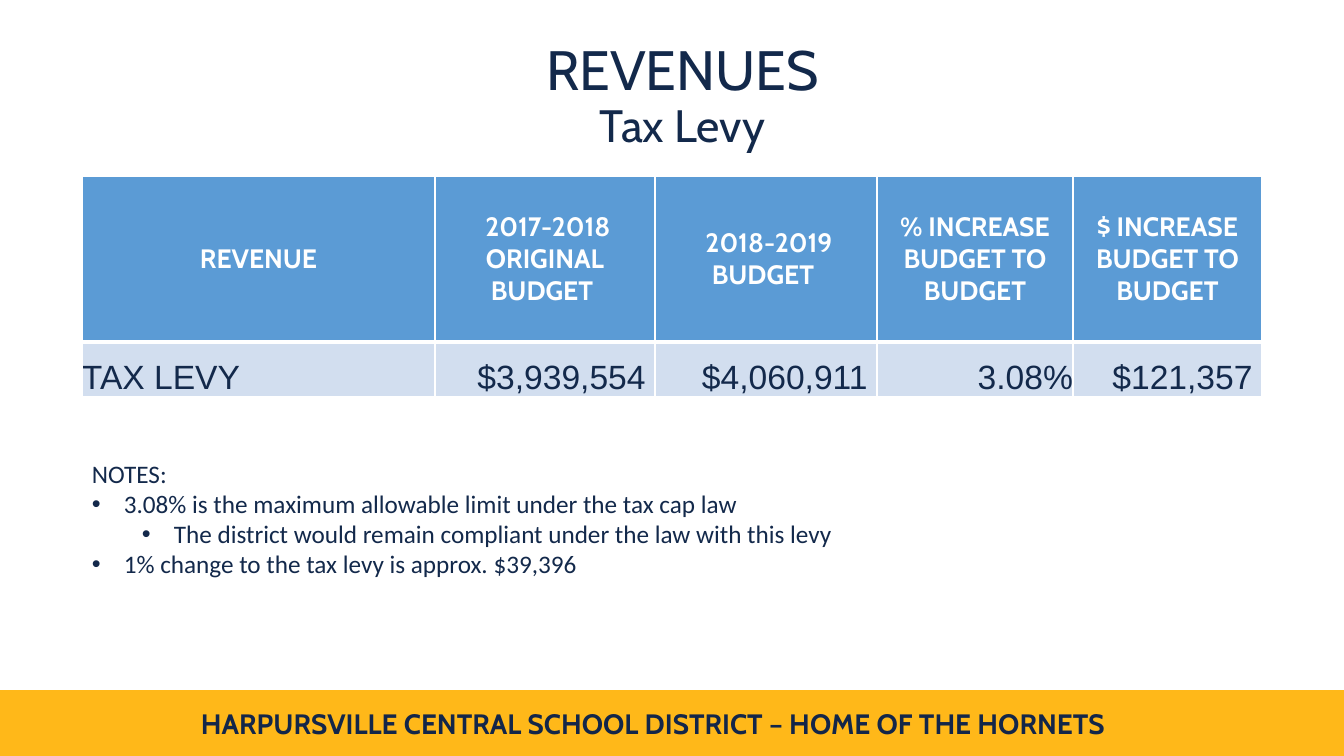
"""Build the tax levy revenue slide."""
from lxml.etree import SubElement
from pptx import Presentation
from pptx.dml.color import RGBColor
from pptx.enum.shapes import MSO_SHAPE
from pptx.enum.text import MSO_ANCHOR, MSO_AUTO_SIZE, PP_ALIGN
from pptx.oxml import parse_xml
from pptx.oxml.ns import nsdecls, qn
from pptx.util import Pt

WIDE, HIGH = 1344, 756
SCALE = 12192000 / WIDE
NAVY, WHITE, GOLD = "13294B", "FFFFFF", "FFB819"

TITLE = [("REVENUES", 39.6), ("Tax Levy", 32.4)]
FOOTER = "HARPURSVILLE CENTRAL SCHOOL DISTRICT – HOME OF THE HORNETS"
HEADS = ["REVENUE", " 2017-2018 ORIGINAL BUDGET ", " 2018-2019 BUDGET ",
         "% INCREASE BUDGET TO BUDGET", "$ INCREASE BUDGET TO BUDGET"]
LEVY = ["TAX LEVY", "$3,939,554 ", "$4,060,911 ", "3.08%", "$121,357 "]
NOTES = [
    (None, "NOTES:"),
    (0, "3.08% is the maximum allowable limit under the tax cap law"),
    (1, "The district would remain compliant under the law with this levy"),
    (0, "1% change to the tax levy is approx. $39,396"),
]
COLS, ROWS = [353, 220, 222, 196, 189], [166, 55]
BOXES = {
    "title": (103, 45, 1159, 105),
    "band": (0, 691, WIDE, 64),
    "footer": (177, 702, 952, 44),
    "table": (82, 176, sum(COLS), sum(ROWS)),
    "notes": (82, 453, 996, 132),
}
HANG, STEP = 32, 50
STYLES = [
    dict(fill="5B9BD5", color=WHITE, anchor=MSO_ANCHOR.MIDDLE,
         edges=dict(L=1, R=1, T=1, B=3),
         font=dict(name="Cabin", size=Pt(19), bold=True)),
    dict(fill="D2DEEF", color=NAVY, anchor=MSO_ANCHOR.BOTTOM,
         edges=dict(L=1, R=1, T=3, B=1),
         font=dict(name="Arial", size=Pt(24), bold=False)),
]


def px(n):
    return round(n * SCALE)


def box(name):
    return [px(n) for n in BOXES[name]]


def put(obj, **vals):
    for key, val in vals.items():
        setattr(obj, key, val)


def paint(fill, color):
    fill.solid()
    fill.fore_color.rgb = RGBColor.from_string(color)


def style(font, color, **vals):
    put(font, **vals)
    font.color.rgb = RGBColor.from_string(color)


def edge(cell, sides):
    props = cell._tc.get_or_add_tcPr()
    for spot, (side, width) in enumerate(sides.items()):
        line = parse_xml(
            f'<a:ln{side} {nsdecls("a")} w="{Pt(width)}"><a:solidFill>'
            f'<a:srgbClr val="{WHITE}"/></a:solidFill></a:ln{side}>')
        props.insert(spot, line)


def add_title(slide):
    shape = slide.shapes.title
    put(shape, **dict(zip(("left", "top", "width", "height"), box("title"))))
    paint(shape.fill, WHITE)
    put(shape.text_frame, auto_size=MSO_AUTO_SIZE.NONE, word_wrap=True,
        vertical_anchor=MSO_ANCHOR.MIDDLE)
    para = shape.text_frame.paragraphs[0]
    put(para, alignment=PP_ALIGN.CENTER, line_spacing=0.9)
    for i, (text, size) in enumerate(TITLE):
        if i:
            para.add_line_break()
        run = para.add_run()
        run.text = text
        style(run.font, NAVY, name="Cabin", size=Pt(size))


def add_footer(slide):
    band = slide.shapes.add_shape(MSO_SHAPE.RECTANGLE, *box("band"))
    band.shadow.inherit = False
    paint(band.fill, GOLD)
    paint(band.line.fill, GOLD)
    band.line.width = Pt(1)
    frame = slide.shapes.add_textbox(*box("footer")).text_frame
    frame.word_wrap = True
    para = frame.paragraphs[0]
    put(para, text=FOOTER, alignment=PP_ALIGN.CENTER)
    style(para.font, "132649", name="Cabin", size=Pt(20), bold=True)


def add_grid(slide):
    table = slide.shapes.add_table(2, len(COLS), *box("table")).table
    put(table, first_row=True, horz_banding=False)
    for col, width in zip(table.columns, COLS):
        col.width = px(width)
    for r, (texts, look) in enumerate(zip((HEADS, LEVY), STYLES)):
        table.rows[r].height = px(ROWS[r])
        for c, text in enumerate(texts):
            cell = table.cell(r, c)
            put(cell, margin_left=0, margin_right=0, margin_top=0,
                margin_bottom=0, vertical_anchor=look["anchor"])
            paint(cell.fill, look["fill"])
            edge(cell, look["edges"])
            para = cell.text_frame.paragraphs[0]
            body = PP_ALIGN.RIGHT if c else PP_ALIGN.LEFT
            put(para, text=text, alignment=body if r else PP_ALIGN.CENTER)
            style(para.runs[0].font, look["color"], **look["font"])


def add_notes(slide):
    frame = slide.shapes.add_textbox(*box("notes")).text_frame
    frame.word_wrap = True
    for i, (level, text) in enumerate(NOTES):
        para = frame.add_paragraph() if i else frame.paragraphs[0]
        para.text = text
        if level is not None:
            para.level = level
            props = para._p.get_or_add_pPr()
            props.set("marL", str(px(HANG + STEP * level)))
            props.set("indent", str(-px(HANG)))
            SubElement(props, qn("a:buFont"), typeface="Arial")
            SubElement(props, qn("a:buChar"), char="•")
        style(para.runs[0].font, NAVY, name="Calibri", size=Pt(18))


def main():
    deck = Presentation()
    put(deck, slide_width=px(WIDE), slide_height=px(HIGH))
    slide = deck.slides.add_slide(deck.slide_layouts[5])
    for add in (add_footer, add_title, add_grid, add_notes):
        add(slide)
    deck.save("out.pptx")


if __name__ == "__main__":
    main()
